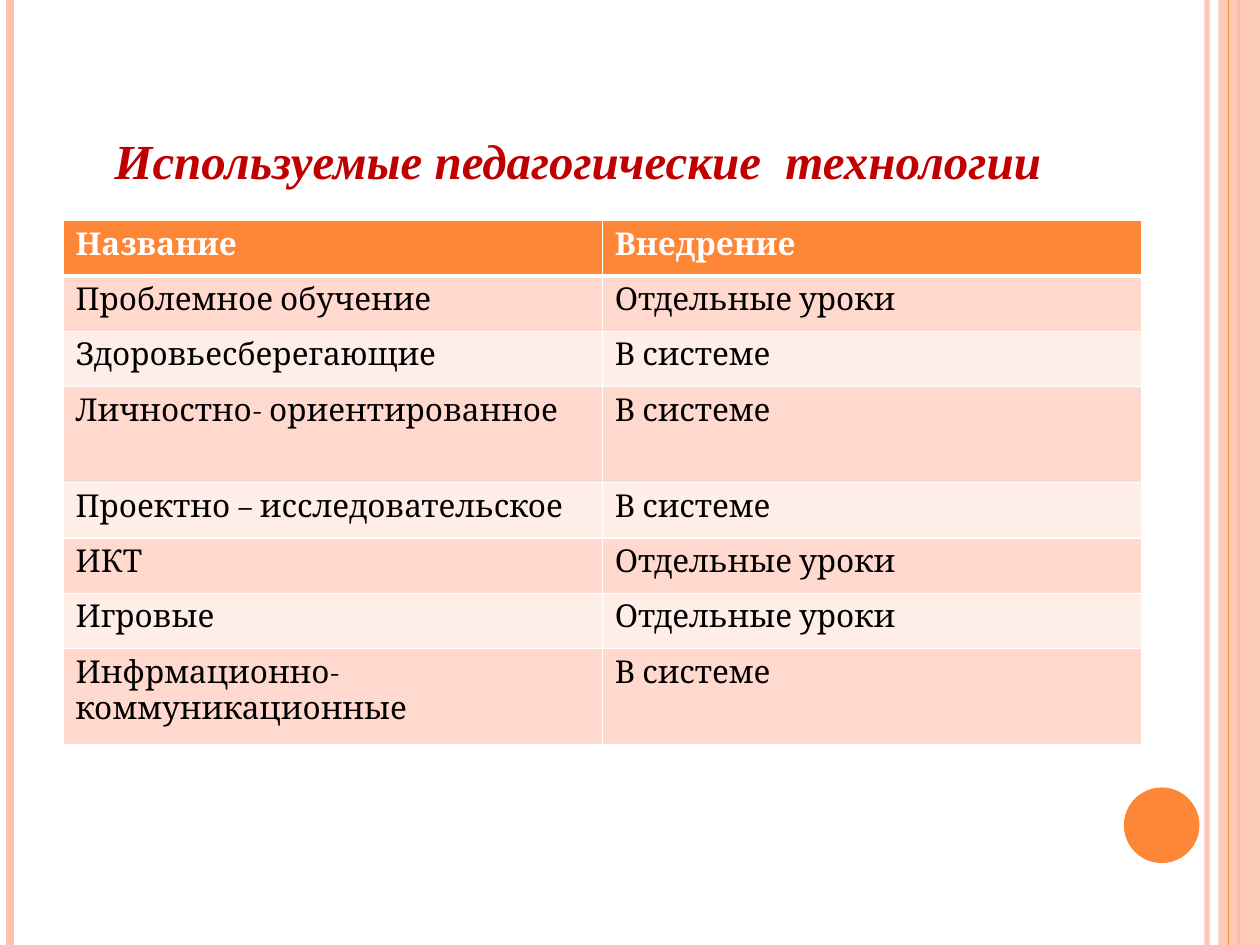
from lxml.etree import SubElement as Sub
from pptx import Presentation
from pptx.dml.color import RGBColor
from pptx.enum.shapes import MSO_CONNECTOR as LINE, MSO_SHAPE as SHAPE
from pptx.enum.text import MSO_ANCHOR as ANCHOR, PP_ALIGN as ALIGN
from pptx.oxml.ns import qn
from pptx.util import Inches, Pt

ORANGE = RGBColor(0xFE, 0x86, 0x37)
PEACH = RGBColor(0xFE, 0xC3, 0xAE)
BAND = RGBColor(0xFF, 0xD9, 0xCE)
PALE = RGBColor(0xFF, 0xED, 0xE8)
RED = RGBColor(0xC0, 0x00, 0x00)
WHITE = RGBColor(0xFF, 0xFF, 0xFF)
BLACK = RGBColor(0x00, 0x00, 0x00)

ROWS = [
    ("Название", "Внедрение"),
    ("Проблемное обучение", "Отдельные уроки"),
    ("Здоровьесберегающие", "В системе"),
    ("Личностно- ориентированное", "В системе"),
    ("Проектно – исследовательское", "В системе"),
    ("ИКТ", "Отдельные уроки"),
    ("Игровые", "Отдельные уроки"),
    ("Инфрмационно-коммуникационные", "В системе"),
]
TALL = (3, 7)


def set_alpha(fill, percent):
    color = fill._xPr.find(qn("a:solidFill"))[0]
    Sub(color, qn("a:alpha"), val=str(percent * 1000))


def add_border(cell, side, width):
    line = Sub(cell._tc.get_or_add_tcPr(), qn("a:ln" + side), w=str(Pt(width)))
    fill = Sub(line, qn("a:solidFill"))
    Sub(fill, qn("a:srgbClr"), val=str(WHITE))


prs = Presentation()
prs.slide_width, prs.slide_height = Inches(10), Inches(7.5)
slide = prs.slides.add_slide(prs.slide_layouts[5])
shapes = slide.shapes

# Side stripe and circle
stripe = shapes.add_shape(SHAPE.RECTANGLE, Inches(9.67), 0, Inches(0.33), Inches(7.5))
circle = shapes.add_shape(SHAPE.OVAL, Inches(8.92), Inches(6.25), Inches(0.6), Inches(0.6))
for shape, color in ((stripe, PEACH), (circle, ORANGE)):
    shape.shadow.inherit = False
    shape.fill.solid()
    shape.fill.fore_color.rgb = color
    shape.line.fill.background()
set_alpha(stripe.fill, 87)

# Vertical lines
for x, color, width, alpha in (
    (9.58, PEACH, 3, 93),
    (0.08, PEACH, 4.5, 100),
    (9.83, ORANGE, 1.5, 100),
    (9.75, ORANGE, 0.75, 100),
):
    rule = shapes.add_connector(LINE.STRAIGHT, Inches(x), 0, Inches(x), Inches(7.5))
    rule.line.color.rgb = color
    rule.line.width = Pt(width)
    if alpha < 100:
        set_alpha(rule.line.fill, alpha)
    Sub(rule._element.spPr, qn("a:effectLst"))
    if x == 9.83:
        # The stripe veils this line
        stripe._element.addprevious(rule._element)

# Title
title = shapes.title
title.left, title.top = Inches(0.5), Inches(0.3)
title.width, title.height = Inches(8.17), Inches(1.25)
frame = title.text_frame
frame.text = "Используемые педагогические  технологии"
frame.vertical_anchor = ANCHOR.BOTTOM
para = frame.paragraphs[0]
para.alignment = ALIGN.CENTER
font = para.runs[0].font
font.name, font.size = "Times New Roman", Pt(28)
font.bold = font.italic = True
font.color.rgb = RED

# Table
table = shapes.add_table(
    len(ROWS), 2, Inches(0.5), Inches(1.75), Inches(8.56), Inches(4.16)
).table
for col in table.columns:
    col.width = Inches(4.28)
for r, texts in enumerate(ROWS):
    head = r == 0
    table.rows[r].height = Inches(0.76 if r in TALL else 0.44)
    for c, text in enumerate(texts):
        cell = table.cell(r, c)
        for side in "LRTB":
            thick = (head and side == "B") or (r == 1 and side == "T")
            add_border(cell, side, 3 if thick else 1)
        cell.fill.solid()
        cell.fill.fore_color.rgb = ORANGE if head else BAND if r % 2 else PALE
        cell.text_frame.text = text
        font = cell.text_frame.paragraphs[0].runs[0].font
        font.name, font.size, font.bold = "Cambria", Pt(18), head
        font.color.rgb = WHITE if head else BLACK

prs.save("out.pptx")
